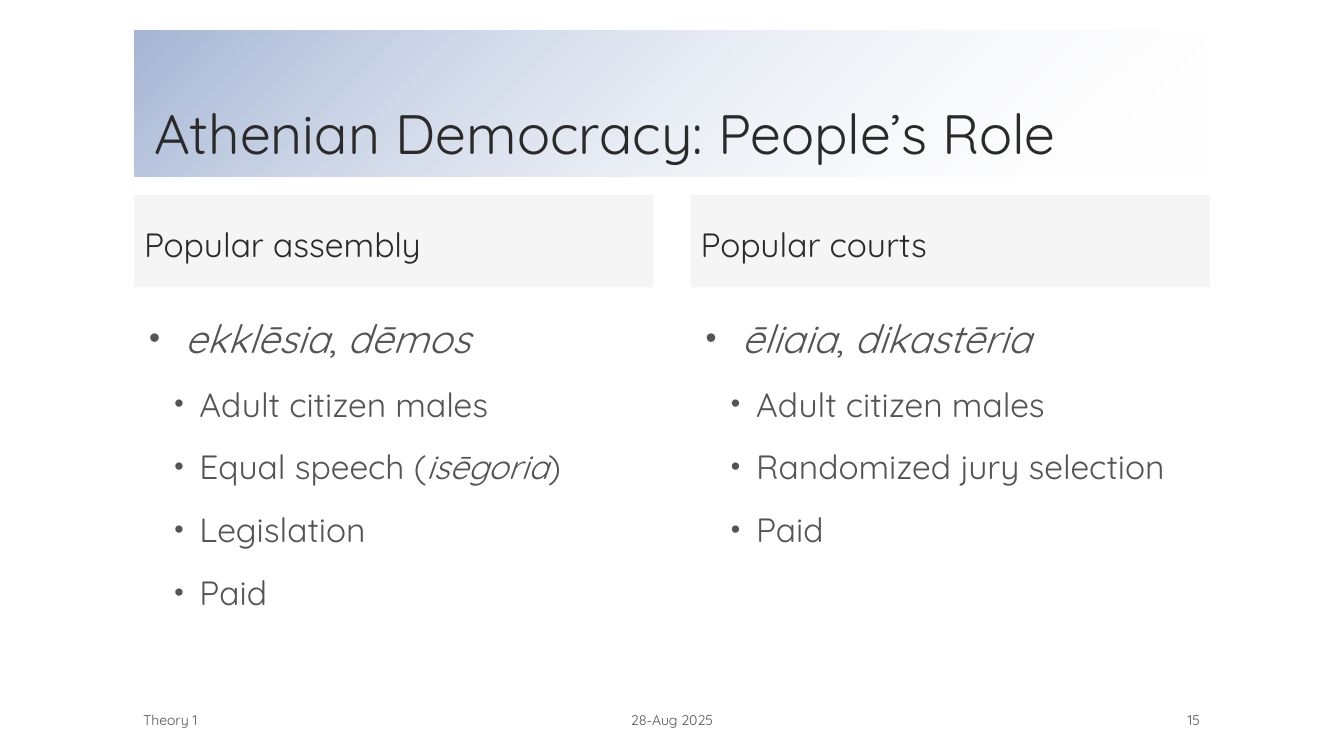
from lxml import etree
from pptx import Presentation
from pptx.dml.color import RGBColor
from pptx.enum import shapes, text
from pptx.oxml.ns import qn
from pptx.util import Inches, Pt

FONT = "Quicksand"
DARK, GREY = "2A2A2A", "545454"
LEFT, WIDTH, COLUMN_WIDTH = 1.33, 10.67, 5.15

COLUMNS = [
    ("Popular assembly", " *ekklēsia*, *dēmos*",
     ["Adult citizen males", "Equal speech (*isēgoria*)", "Legislation", "Paid"]),
    ("Popular courts", " *ēliaia*, *dikastēria*",
     ["Adult citizen males", "Randomized jury selection", "Paid"]),
]


def rgb(color):
    return RGBColor.from_string(color)


def set_alpha(color_element, percent):
    etree.SubElement(color_element, qn("a:alpha"), val=str(percent * 1000))


def add_bullet(paragraph, color, indent):
    props = paragraph._p.get_or_add_pPr()
    props.set("marL", str(Inches(indent)))
    props.set("indent", str(Inches(-0.25)))
    bullet_color = etree.SubElement(props, qn("a:buClr"))
    etree.SubElement(bullet_color, qn("a:srgbClr"), val=color)
    etree.SubElement(props, qn("a:buSzPct"), val="80000")
    etree.SubElement(props, qn("a:buFont"), typeface="Arial")
    etree.SubElement(props, qn("a:buChar"), char="•")


def write(paragraph, words, size, color=GREY, align=text.PP_ALIGN.LEFT,
          line=1.0, before=0, level=0, indent=None):
    """Fill a paragraph; words between asterisks are italic."""
    paragraph.alignment = align
    paragraph.line_spacing = line
    paragraph.space_before = Pt(before)
    paragraph.level = level
    if indent is not None:
        add_bullet(paragraph, color, indent)
    for position, part in enumerate(words.split("*")):
        if part:
            run = paragraph.add_run()
            run.text = part
            run.font.name = FONT
            run.font.size = Pt(size)
            run.font.italic = position % 2 == 1
            run.font.color.rgb = rgb(color)


def add_band(slide, left, top, width, height):
    band = slide.shapes.add_shape(
        shapes.MSO_SHAPE.RECTANGLE,
        Inches(left), Inches(top), Inches(width), Inches(height))
    band.shadow.inherit = False
    band.line.fill.background()
    band.text_frame.word_wrap = True
    return band


def add_text_frame(slide, left, top, width, height):
    frame = slide.shapes.add_textbox(
        Inches(left), Inches(top), Inches(width), Inches(height)).text_frame
    frame.word_wrap = True
    return frame


def add_title(slide, words, left, top, width, height):
    band = add_band(slide, left, top, width, height)
    band.fill.gradient()
    band.fill.gradient_angle = 315
    for stop, color, position in zip(band.fill.gradient_stops, ("A6B6D6", "FFFFFF"), (0, 1)):
        stop.color.rgb = rgb(color)
        stop.position = position
    fade = band._element.spPr.findall(".//" + qn("a:srgbClr"))[-1]
    set_alpha(fade, 0)
    frame = band.text_frame
    frame.vertical_anchor = text.MSO_ANCHOR.BOTTOM
    frame.margin_left = frame.margin_right = Inches(0.2)
    frame.margin_top = frame.margin_bottom = Inches(0.1)
    write(frame.paragraphs[0], words, 39.6, color=DARK, line=0.9)


def add_column(slide, heading, terms, points, left, top, width):
    band = add_band(slide, left, top, width, 0.92)
    band.fill.solid()
    band.fill.fore_color.rgb = rgb("BFBFBF")
    set_alpha(band._element.spPr.find(".//" + qn("a:srgbClr")), 15)
    band.text_frame.vertical_anchor = text.MSO_ANCHOR.MIDDLE
    write(band.text_frame.paragraphs[0], heading, 24, color=DARK, line=1.14)

    body = add_text_frame(slide, left, top + 1.07, width, 3.58)
    write(body.paragraphs[0], terms, 28, line=1.14, before=18, indent=0.3)
    for point in points:
        write(body.add_paragraph(), point, 24, line=1.14, before=12, level=1, indent=0.55)


def add_footer(slide, top):
    for words, left, width, align in (
            ("Theory 1", 1.32, 2.02, text.PP_ALIGN.LEFT),
            ("28-Aug 2025", 6.13, 1.07, text.PP_ALIGN.CENTER),
            ("15", 11.61, 0.39, text.PP_ALIGN.RIGHT)):
        frame = add_text_frame(slide, left, top, width, 0.29)
        write(frame.paragraphs[0], words, 10, align=align)


def main():
    deck = Presentation()
    deck.slide_width, deck.slide_height = Inches(13.33), Inches(7.5)
    slide = deck.slides.add_slide(deck.slide_layouts[6])
    add_title(slide, "Athenian Democracy: People’s Role", LEFT, 0.3, WIDTH, 1.45)
    for number, (heading, terms, points) in enumerate(COLUMNS):
        left = LEFT + number * (WIDTH - COLUMN_WIDTH)
        add_column(slide, heading, terms, points, left, 1.93, COLUMN_WIDTH)
    add_footer(slide, 7.01)
    deck.save("out.pptx")


if __name__ == "__main__":
    main()
